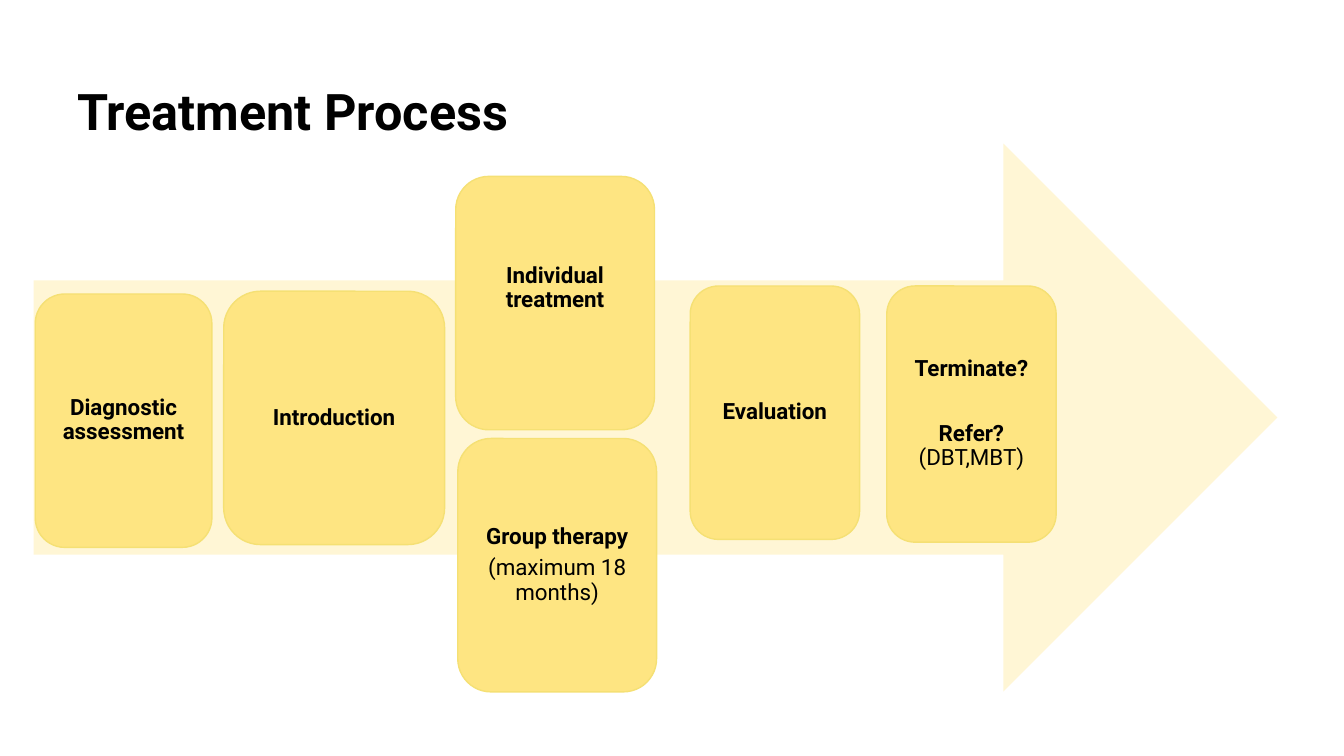
from pptx import Presentation
from pptx.dml.color import RGBColor as RGB
from pptx.enum.shapes import MSO_SHAPE as Kind
from pptx.enum.text import MSO_ANCHOR as Anchor, PP_ALIGN as Align
from pptx.util import Pt

COLORS = {"arrow": "FFF6D5", "card": "FEE582", "edge": "F5E074", "text": "000000"}


def paint(shape, fill):
    shape.shadow.inherit = False
    shape.fill.solid()
    shape.fill.fore_color.rgb = RGB.from_string(COLORS[fill])


def style(par, size, bold):
    for run in par.runs:
        run.font.name = "Roboto"
        run.font.size = Pt(size)
        run.font.bold = bold
        run.font.color.rgb = RGB.from_string(COLORS["text"])


deck = Presentation()
deck.slide_width, deck.slide_height = Pt(960), Pt(540)
slide = deck.slides.add_slide(deck.slide_layouts[6])

title = slide.shapes.add_textbox(Pt(48), Pt(45.4), Pt(864), Pt(40.3))
frame = title.text_frame
frame.word_wrap = True
frame.margin_top = Pt(7.2)
frame.text = "Treatment Process"
frame.paragraphs[0].line_spacing = 1.1
style(frame.paragraphs[0], 36, True)

arrow = slide.shapes.add_shape(Kind.RIGHT_ARROW, Pt(24), Pt(102.5), Pt(888.5), Pt(391.5))
paint(arrow, "arrow")
arrow.line.fill.background()

# left, top, width, height, lift, lines of (text, bold, space before)
cards = [
    (25.2, 210, 126.2, 181, 0, [("Diagnostic assessment", True, 0)]),
    (159.8, 208, 157.8, 181, 0, [("Introduction", True, 0)]),
    (325.5, 126, 142, 181, 21, [("Individual treatment", True, 0)]),
    (493, 204.3, 121, 181, 0, [("Evaluation", True, 0)]),
    (633.4, 204.3, 121, 183, 0,
     [("Terminate?", True, 0), ("Refer?", True, 28.8), ("(DBT,MBT)", False, 0)]),
    (327, 313.2, 142, 181, 0,
     [("Group therapy", True, 0), ("(maximum 18 months)", False, 5)]),
]
for left, top, width, height, lift, lines in cards:
    card = slide.shapes.add_shape(Kind.ROUNDED_RECTANGLE, Pt(left), Pt(top), Pt(width), Pt(height))
    paint(card, "card")
    card.line.color.rgb = RGB.from_string(COLORS["edge"])
    card.line.width = Pt(1)
    frame = card.text_frame
    frame.word_wrap = True
    frame.vertical_anchor = Anchor.MIDDLE
    frame.margin_left = frame.margin_right = frame.margin_top = Pt(5)
    frame.margin_bottom = Pt(5 + lift)
    frame.text = "\n".join(text for text, bold, gap in lines)
    for par, (text, bold, gap) in zip(frame.paragraphs, lines):
        par.alignment = Align.CENTER
        par.line_spacing = 0.9
        if gap:
            par.space_before = Pt(gap)
        style(par, 16, bold)

deck.save("out.pptx")
